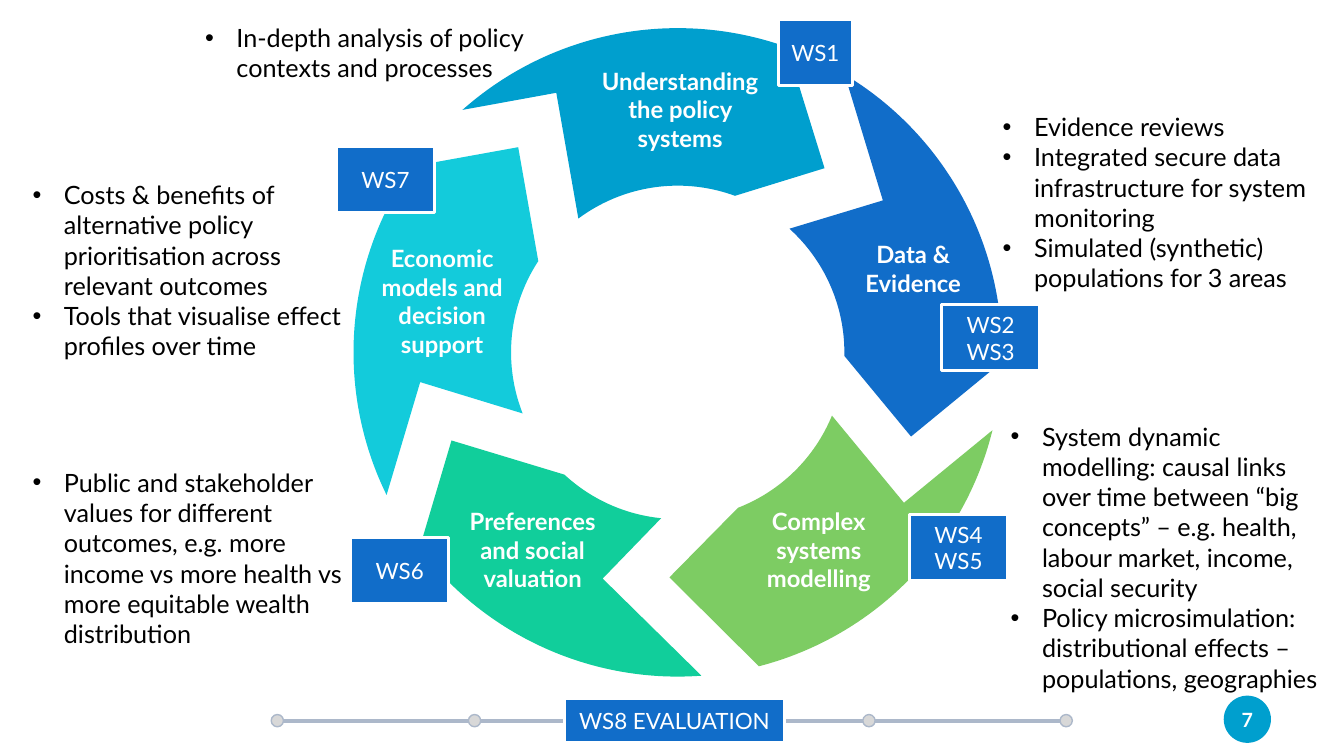
from dataclasses import dataclass
from math import cos, radians, sin, tan

from lxml.etree import SubElement
from pptx import Presentation
from pptx.dml.color import RGBColor
from pptx.enum.shapes import MSO_AUTO_SHAPE_TYPE as Preset
from pptx.enum.shapes import MSO_CONNECTOR_TYPE as Link
from pptx.enum.text import MSO_ANCHOR as Anchor
from pptx.enum.text import MSO_AUTO_SIZE as AutoSize
from pptx.enum.text import PP_PARAGRAPH_ALIGNMENT as Align
from pptx.oxml.ns import qn
from pptx.util import Cm, Pt

COLOURS = {"white": "FFFFFF", "black": "000000", "teal": "009FCE", "blue": "116DC9",
           "green": "7DCC63", "emerald": "11CE9B", "cyan": "13CBDB",
           "rail": "ACB8CA", "dot": "D8D8D8"}
FONT = "Lato"
RING_X, RING_Y = 17.08, 8.88
OUTER_RADIUS, INNER_RADIUS = 8.17, 4.2
RAIL_LEFT, RAIL_STEP, RAIL_Y, DOT_SIZE = 6.99, 4.97, 18.16, 0.31


@dataclass
class Box:
    left: float
    top: float
    width: float
    height: float

    def lengths(self) -> tuple:
        return Cm(self.left), Cm(self.top), Cm(self.width), Cm(self.height)


@dataclass
class Segment:
    """Ring arrow; angles are degrees clockwise from the right."""
    colour: str
    outer: tuple[float, float]
    tip: tuple[float, float]
    inner: tuple[float, float]
    notch: tuple[float, float]
    label: str
    label_box: Box


@dataclass
class Tag:
    lines: list[str]
    box: Box


@dataclass
class BulletList:
    items: list[str]
    box: Box


SEGMENTS = [
    Segment("green", (13.9, 75.5), (16.87, 14.55), (68.8, 22.3), (22.78, 12.67),
            "Complex systems modelling", Box(18.26, 12.64, 4.75, 2.44)),
    Segment("blue", (-59, 1.7), (22.96, 11), (1.2, -47.9), (22.25, 5.05),
            "Data & Evidence", Box(20.64, 5.92, 4.75, 1.7)),
    Segment("teal", (-131.6, -70.3), (20.78, 4.24), (-69.9, -126.6), (14.02, 2.34),
            "Understanding the policy systems", Box(14.55, 1.54, 5.18, 2.44)),
    Segment("cyan", (153.9, 215), (13.06, 3.71), (213.2, 158.5), (10.59, 9.63),
            "Economic models and decision support", Box(8.92, 6.01, 4.45, 3.18)),
    Segment("emerald", (85.8, 142.8), (11.38, 11.1), (132.8, 95.7), (15.19, 14.58),
            "Preferences and social valuation", Box(11.28, 12.64, 4.29, 2.44)),
]
TAGS = [
    Tag(["WS1"], Box(19.61, 0.5, 1.88, 1.66)),
    Tag(["WS2 WS3"], Box(23.73, 7.68, 2.47, 1.66)),
    Tag(["WS4", "WS5"], Box(22.92, 12.97, 2.47, 1.66)),
    Tag(["WS6"], Box(8.84, 13.54, 2.47, 1.66)),
    Tag(["WS7"], Box(8.48, 3.69, 2.47, 1.66)),
    Tag(["WS8 EVALUATION"], Box(14.22, 17.6, 5.56, 1.12)),
]
LISTS = [
    BulletList(["Evidence reviews",
                "Integrated secure data infrastructure for system monitoring",
                "Simulated (synthetic) populations for 3 areas"],
               Box(25.02, 2.68, 8.71, 4.88)),
    BulletList(["Public and stakeholder values for different outcomes, e.g. more "
                "income vs more health vs more equitable wealth distribution"],
               Box(0.57, 11.64, 8.71, 4.88)),
    BulletList(["Costs & benefits of alternative policy prioritisation across "
                "relevant outcomes",
                "Tools that visualise effect profiles over time"],
               Box(0.57, 4.39, 8.71, 4.88)),
    BulletList(["System dynamic modelling: causal links over time between “big "
                "concepts” – e.g. health, labour market, income, social security",
                "Policy microsimulation: distributional effects – populations, "
                "geographies"],
               Box(25.22, 10.48, 8.71, 7.19)),
    BulletList(["In-depth analysis of policy contexts and processes"],
               Box(4.92, 0.43, 8.71, 1.8)),
]


def rgb(name: str) -> RGBColor:
    return RGBColor.from_string(COLOURS[name])


def add_bullet(para) -> None:
    props = para._p.get_or_add_pPr()
    props.set("marL", str(Cm(0.79)))
    props.set("indent", str(-Cm(0.79)))
    colour = SubElement(props, qn("a:buClr"))
    SubElement(colour, qn("a:srgbClr"), val=COLOURS["black"])
    SubElement(props, qn("a:buFont"), typeface="Arial")
    SubElement(props, qn("a:buChar"), char="•")


def write(shape, lines: list[str], *, size: float, colour: str = "white",
          bold: bool = False, bullets: bool = False, align=Align.CENTER,
          anchor=Anchor.TOP, side_inset: float = 0.25) -> None:
    frame = shape.text_frame
    frame.word_wrap = True
    frame.auto_size = AutoSize.NONE
    frame.vertical_anchor = anchor
    frame.margin_left = frame.margin_right = Cm(side_inset)
    frame.margin_top = frame.margin_bottom = Cm(0.13)
    for index, line in enumerate(lines):
        para = frame.add_paragraph() if index else frame.paragraphs[0]
        para.alignment = align
        para.space_before = Pt(0)
        if bullets:
            add_bullet(para)
        span = para.add_run()
        span.text = line
        span.font.name = FONT
        span.font.size = Pt(size)
        span.font.bold = bold
        span.font.color.rgb = rgb(colour)


def paint(shape, fill: str, line: str | None = None, weight: float = 1) -> None:
    shape.shadow.inherit = False
    shape.fill.solid()
    shape.fill.fore_color.rgb = rgb(fill)
    if line:
        shape.line.color.rgb = rgb(line)
        shape.line.width = Pt(weight)
    else:
        shape.line.fill.background()


def arc(radius: float, angles: tuple[float, float]) -> list[list]:
    """Start point, then one Bézier point triple per quadrant crossed."""
    low, high = sorted(angles)
    stops = [low, *(turn for turn in range(-180, 361, 90) if low < turn < high), high]
    if angles[0] > angles[1]:
        stops.reverse()

    def point(degrees: float, pull: float = 0) -> tuple[float, float]:
        x, y = cos(radians(degrees)), sin(radians(degrees))
        return RING_X + radius * (x - pull * y), RING_Y + radius * (y + pull * x)

    steps = [[point(stops[0])]]
    for start, end in zip(stops, stops[1:]):
        pull = 4 / 3 * tan(radians(end - start) / 4)
        steps.append([point(start, pull), point(end, -pull), point(end)])
    return steps


def draw_segment(page, segment: Segment) -> None:
    steps = [*arc(OUTER_RADIUS, segment.outer), [segment.tip],
             *arc(INNER_RADIUS, segment.inner), [segment.notch]]
    points = [(Cm(x), Cm(y)) for step in steps for x, y in step]
    builder = page.shapes.build_freeform(*points[0])
    builder.add_line_segments(points[1:], close=True)
    shape = builder.convert_to_shape()
    paint(shape, segment.colour)
    # Turn each triple of line ends into one curve
    lines = iter(list(shape._element.iter(qn("a:lnTo"))))
    for step in steps[1:]:
        ends = [next(lines) for _ in step]
        if len(ends) == 3:
            ends[0].tag = qn("a:cubicBezTo")
            for end in ends[1:]:
                ends[0].append(end[0])
                end.getparent().remove(end)


def draw_list(page, holder, bullet_list: BulletList) -> None:
    box = holder or page.shapes.add_textbox(*bullet_list.box.lengths())
    box.left, box.top, box.width, box.height = bullet_list.box.lengths()
    write(box, bullet_list.items, size=18, colour="black", bullets=True, align=Align.LEFT)


def draw_tag(page, tag: Tag) -> None:
    shape = page.shapes.add_shape(Preset.RECTANGLE, *tag.box.lengths())
    paint(shape, "blue", "white", 2.25)
    write(shape, tag.lines, size=16, anchor=Anchor.MIDDLE)


def draw_timeline(page) -> None:
    stops = [RAIL_LEFT + RAIL_STEP * index for index in range(5)]
    for start, end in zip(stops, stops[1:]):
        rail = page.shapes.add_connector(Link.STRAIGHT, Cm(start), Cm(RAIL_Y),
                                         Cm(end), Cm(RAIL_Y))
        rail.line.color.rgb = rgb("rail")
        rail.line.width = Pt(3)
        SubElement(rail._element.spPr, qn("a:effectLst"))
    # The middle stop is the evaluation tag
    for stop in stops[:2] + stops[3:]:
        place = Box(stop - DOT_SIZE / 2, RAIL_Y - DOT_SIZE / 2, DOT_SIZE, DOT_SIZE)
        paint(page.shapes.add_shape(Preset.OVAL, *place.lengths()), "dot", "rail")


def main() -> None:
    deck = Presentation()
    deck.slide_width, deck.slide_height = Cm(33.87), Cm(19.05)
    page = deck.slides.add_slide(deck.slide_layouts.get_by_name("Comparison"))
    title = page.shapes.title.element
    title.getparent().remove(title)
    # Bullet lists: the layout's four bodies, then a text box
    bodies = iter(list(page.placeholders))
    for bullet_list in LISTS:
        draw_list(page, next(bodies, None), bullet_list)
    # Ring of arrows and their labels
    for segment in SEGMENTS:
        draw_segment(page, segment)
        label = page.shapes.add_textbox(*segment.label_box.lengths())
        write(label, [segment.label], size=17, bold=True)
    # Timeline and work stream tags
    draw_timeline(page)
    for tag in TAGS:
        draw_tag(page, tag)
    # Page number
    badge = page.shapes.add_shape(Preset.OVAL, *Box(30.84, 17.53, 1.19, 1.19).lengths())
    paint(badge, "teal")
    write(badge, ["7"], size=14, bold=True, anchor=Anchor.MIDDLE, side_inset=0)
    deck.save("out.pptx")


if __name__ == "__main__":
    main()
